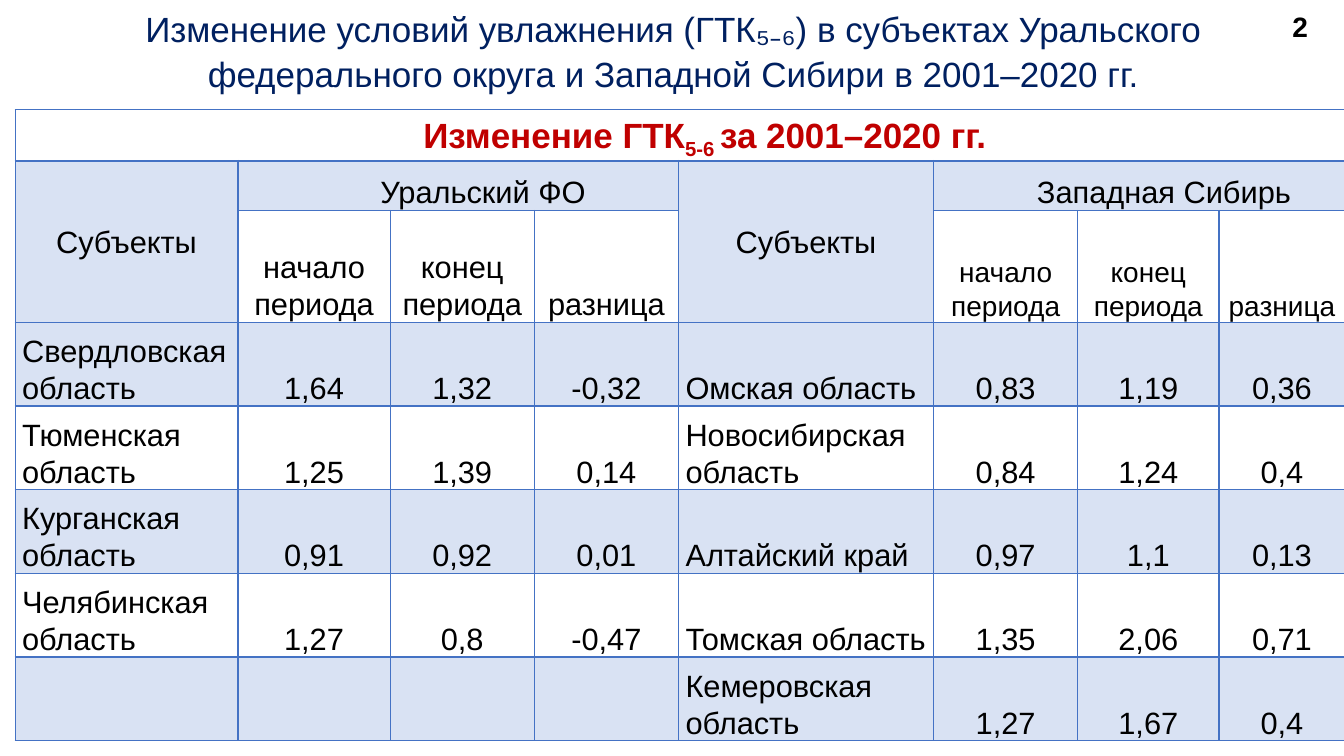
from lxml import etree
from pptx import Presentation
from pptx.dml.color import RGBColor
from pptx.enum.text import MSO_ANCHOR, MSO_AUTO_SIZE, PP_ALIGN
from pptx.oxml.ns import qn
from pptx.util import Inches, Pt

LEFT, CENTER, JUSTIFY = PP_ALIGN.LEFT, PP_ALIGN.CENTER, PP_ALIGN.JUSTIFY
MIDDLE, BOTTOM = MSO_ANCHOR.MIDDLE, MSO_ANCHOR.BOTTOM
GROW = MSO_AUTO_SIZE.SHAPE_TO_FIT_TEXT
COLORS = {"title": "002060", "text": "000000", "heading": "C00000", "accent": "4472C4"}
SPACING = 1.07
COLS = [2.21, 1.51, 1.43, 1.43, 2.53, 1.43, 1.4, 1.25]
ROWS = [0.46, 0.49, 1.11] + [0.83] * 5
PERIODS = ["начало периода", "конец периода", "разница"]
TABLE = [
    ["Изменение ГТК"] + [""] * 7,
    ["Субъекты", "Уральский ФО", "", "", "Субъекты", "Западная Сибирь", "", ""],
    [""] + PERIODS + [""] + PERIODS,
    ["Свердловская область", "1,64", "1,32", "-0,32", "Омская область", "0,83", "1,19", "0,36"],
    ["Тюменская область", "1,25", "1,39", "0,14", "Новосибирская область", "0,84", "1,24", "0,4"],
    ["Курганская область", "0,91", "0,92", "0,01", "Алтайский край", "0,97", "1,1", "0,13"],
    ["Челябинская область", "1,27", "0,8", "-0,47", "Томская область", "1,35", "2,06", "0,71"],
    ["", "", "", "", "Кемеровская область", "1,27", "1,67", "0,4"],
]
MERGES = [(0, 0, 0, 7), (1, 0, 2, 0), (1, 1, 1, 3), (1, 4, 2, 4), (1, 5, 1, 7)]


def style_run(r, size, color="text", bold=False, font="Arial"):
    """Set the font of one run."""
    r.font.name, r.font.size, r.font.bold = font, Pt(size), bold
    r.font.color.rgb = RGBColor.from_string(COLORS[color])


def add_text(s, box, text):
    """Add a wrapping text box and return its text frame."""
    tf = s.shapes.add_textbox(*map(Inches, box)).text_frame
    tf.word_wrap, tf.auto_size = True, GROW
    tf.text = text
    return tf


def add_title(s, box):
    """Place the centred slide title in the box."""
    tf = add_text(s, box, "Изменение условий увлажнения (ГТК₅₋₆) в субъектах Уральского "
                  "федерального округа и Западной Сибири в 2001–2020 гг.")
    tf.margin_left = tf.margin_right = Inches(0.3)
    p = tf.paragraphs[0]
    p.alignment, p.line_spacing = CENTER, SPACING
    style_run(p.runs[0], 25, "title")


def add_page_number(s, box):
    """Place the page number in the box."""
    tf = add_text(s, box, "2")
    style_run(tf.paragraphs[0].runs[0], 20, bold=True)


def set_borders(cell, bottom):
    """Draw the four borders of a cell."""
    tcPr = cell._tc.get_or_add_tcPr()
    for side, width in (("L", 1), ("R", 1), ("T", 1), ("B", bottom)):
        ln = etree.SubElement(tcPr, qn("a:ln" + side), w=str(Pt(width)))
        fill = etree.SubElement(ln, qn("a:solidFill"))
        etree.SubElement(fill, qn("a:srgbClr"), val=COLORS["accent"])


def set_fill(cell, tinted):
    """Give a cell a light tint or no fill."""
    if not tinted:
        cell.fill.background()
        return
    cell.fill.solid()
    cell.fill.fore_color.rgb = RGBColor.from_string(COLORS["accent"])
    color = cell._tc.tcPr.find(qn("a:solidFill")).find(qn("a:srgbClr"))
    etree.SubElement(color, qn("a:alpha"), val="20000")


def add_heading_runs(p):
    """Complete the table heading with its subscript and period."""
    for text in ("5-6 ", "за 2001–2020 гг."):
        p.add_run().text = text
    for r in p.runs:
        style_run(r, 25, "heading", True)
    p.runs[1]._r.get_or_add_rPr().set("baseline", "-25000")


def fill_cell(cell, row, col, text):
    """Write and format one table cell."""
    subject = col in (0, 4)
    set_borders(cell, 2 if row == 0 else 1)
    set_fill(cell, row % 2 == 1 or (row == 2 and subject))
    cell.margin_left = cell.margin_right = Inches(0.07)
    cell.margin_top = cell.margin_bottom = 0
    cell.vertical_anchor = MIDDLE if row == 1 and subject else BOTTOM
    if not text:
        return
    cell.text = text
    p = cell.text_frame.paragraphs[0]
    p.line_spacing = SPACING
    p.alignment = CENTER if row < 3 or not subject else JUSTIFY if col == 0 else LEFT
    if row == 0 or (row == 1 and not subject):
        p._p.get_or_add_pPr().set("indent", str(Inches(0.49)))
    if row == 0:
        add_heading_runs(p)
    else:
        style_run(p.runs[0], 20 if row == 2 and col > 4 else 22)


def add_moisture_table(s, box):
    """Place the table of moisture values in the box."""
    table = s.shapes.add_table(len(ROWS), len(COLS), *map(Inches, box)).table
    for column, width in zip(table.columns, COLS):
        column.width = Inches(width)
    for row, height in zip(table.rows, ROWS):
        row.height = Inches(height)
    for i, texts in enumerate(TABLE):
        for j, text in enumerate(texts):
            fill_cell(table.cell(i, j), i, j, text)
    for top, left, bottom, right in MERGES:
        table.cell(top, left).merge(table.cell(bottom, right))


def main():
    """Build and save the slide."""
    prs = Presentation()
    prs.slide_width, prs.slide_height = Inches(13.33), Inches(7.5)
    s = prs.slides.add_slide(prs.slide_layouts[6])
    add_title(s, (0.15, 0, 13.05, 0.97))
    add_moisture_table(s, (0.15, 1.09, sum(COLS), sum(ROWS)))
    add_page_number(s, (12.72, 0.05, 0.49, 0.44))
    prs.save("out.pptx")


if __name__ == "__main__":
    main()
